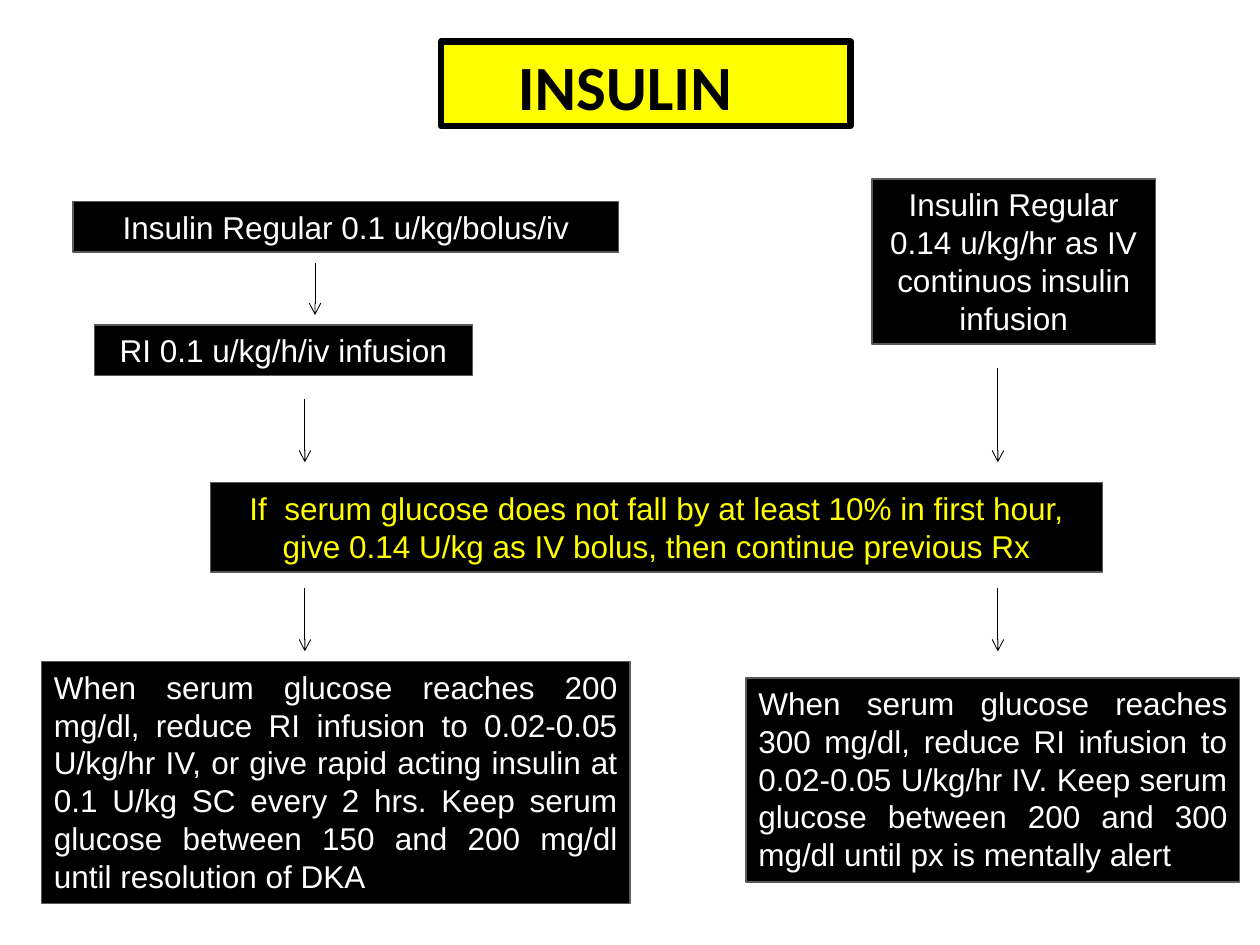
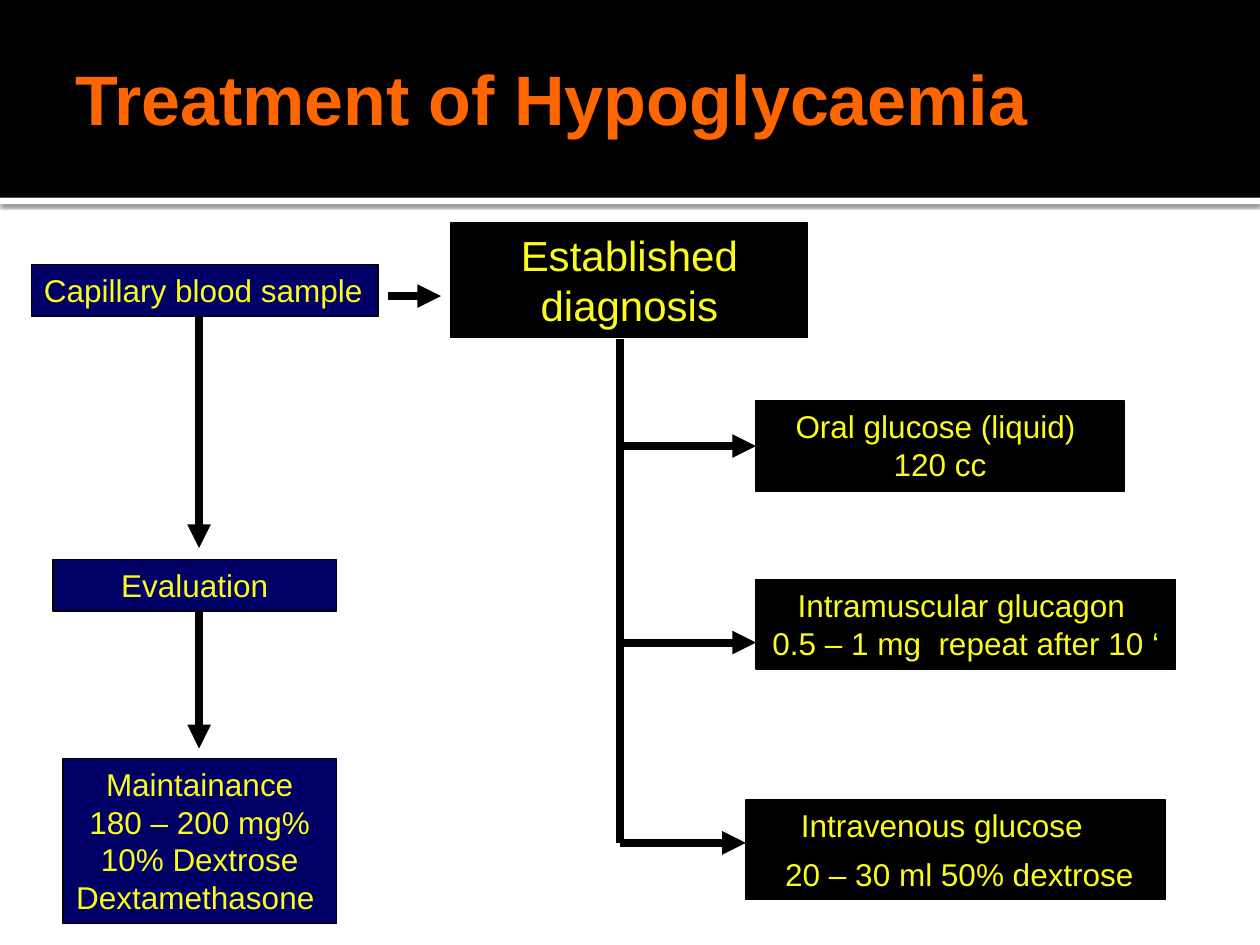
"""Build two flow charts on insulin dosing and the treatment of hypoglycaemia."""
from dataclasses import dataclass

import lxml.etree
import pptx
import pptx.dml.color
import pptx.enum.shapes
import pptx.enum.text
import pptx.oxml.ns
import pptx.util

Inches = pptx.util.Inches
Pt = pptx.util.Pt
qn = pptx.oxml.ns.qn
Align = pptx.enum.text.PP_ALIGN
Anchor = pptx.enum.text.MSO_ANCHOR


@dataclass(frozen=True)
class Theme:
    black: str = "000000"
    white: str = "FFFFFF"
    yellow: str = "FFFF00"
    lemon: str = "FBFB1D"
    navy: str = "000066"
    orange: str = "FF6600"
    edge: str = "595959"
    font: str = "Arial"
    title_font: str = "Calibri"
    body_size: float = 18
    lead_size: float = 24
    insulin_size: float = 36
    title_size: float = 40
    thin: float = 0.5
    outline: float = 0.75
    frame: float = 3.78
    thick: float = 4.5


THEME = Theme()


def rgb(value):
    return pptx.dml.color.RGBColor.from_string(value)


def write(frame, text, *, size=THEME.body_size, color=THEME.white, font=THEME.font,
          bold=False, align=Align.CENTER, anchor=Anchor.TOP, gap=0,
          insets=(0.1, 0.05, 0.1, 0.05), last_indent=0):
    frame.word_wrap = True
    frame.vertical_anchor = anchor
    (frame.margin_left, frame.margin_top,
     frame.margin_right, frame.margin_bottom) = map(Inches, insets)
    frame.text = text
    for para in frame.paragraphs:
        para.alignment = align
        para.space_before = Pt(gap)
        for span in para.runs:
            span.font.size = Pt(size)
            span.font.name = font
            span.font.bold = bold
            span.font.color.rgb = rgb(color)
    if last_indent:
        frame.paragraphs[-1]._p.get_or_add_pPr().set("marL", str(Inches(last_indent)))


class Chart:
    """Holds the theme and the current slide and draws flow chart parts on it."""

    def __init__(self, deck, theme):
        self.deck = deck
        self.theme = theme
        self.page = None

    def start_page(self):
        self.page = self.deck.slides.add_slide(self.deck.slide_layouts[6])

    def panel(self, left, top, width, height, fill, line=None, weight=THEME.outline):
        box = self.page.shapes.add_shape(
            pptx.enum.shapes.MSO_SHAPE.RECTANGLE,
            Inches(left), Inches(top), Inches(width), Inches(height))
        box.shadow.inherit = False
        box.fill.solid()
        box.fill.fore_color.rgb = rgb(fill)
        if line:
            box.line.color.rgb = rgb(line)
            box.line.width = Pt(weight)
        else:
            box.line.fill.background()
        return box

    def step(self, text, left, top, width, height, *, fill=THEME.black,
             line=THEME.black, **style):
        box = self.panel(left, top, width, height, fill, line)
        write(box.text_frame, text, **style)
        return box

    def title(self, text, left, top, width, height, *, inset=0.1, **style):
        box = self.page.shapes.add_textbox(
            Inches(left), Inches(top), Inches(width), Inches(height))
        write(box.text_frame, text, bold=True, align=Align.LEFT,
              anchor=Anchor.MIDDLE, insets=(inset, 0.05, 0.05, 0.05), **style)

    def line(self, start, end, weight, head=None, target=None, side=1):
        connector = self.page.shapes.add_connector(
            pptx.enum.shapes.MSO_CONNECTOR.STRAIGHT, *map(Inches, start + end))
        connector.line.color.rgb = rgb(self.theme.black)
        connector.line.width = Pt(weight)
        if target is not None:
            connector.end_connect(target, side)
        properties = connector._element.spPr
        if head:
            lxml.etree.SubElement(properties.find(qn("a:ln")), qn("a:tailEnd"), type=head)
        lxml.etree.SubElement(properties, qn("a:effectLst"))

    def band(self, height, strip):
        edge = self.panel(0, height, 10, strip, self.theme.white)
        effects = edge._element.spPr.find(qn("a:effectLst"))
        shadow = lxml.etree.SubElement(
            effects, qn("a:outerShdw"), blurRad=str(Pt(2.5)), dist=str(Pt(0.8)),
            dir="5400000", algn="t", rotWithShape="0")
        color = lxml.etree.SubElement(shadow, qn("a:srgbClr"), val=self.theme.black)
        lxml.etree.SubElement(color, qn("a:alpha"), val="60000")
        self.panel(0, 0, 10, height, self.theme.black)


def draw_insulin(chart):
    theme = chart.theme
    chart.start_page()
    chart.panel(3.5, 0.33, 3.25, 0.67, theme.yellow, theme.black, theme.frame)
    chart.title("INSULIN", 3.67, 0.33, 3.58, 0.7, inset=0.44,
                size=theme.insulin_size, font=theme.title_font, color=theme.black)

    for text, place, style in (
        ("Insulin Regular 0.1 u/kg/bolus/iv", (0.58, 1.6, 4.33, 0.4), {}),
        ("RI 0.1 u/kg/h/iv infusion", (0.75, 2.58, 3, 0.4), {}),
        ("If  serum glucose does not fall by at least 10% in first hour, "
         "give 0.14 U/kg as IV bolus, then continue previous Rx",
         (1.67, 3.83, 7.08, 0.71), {"color": theme.yellow}),
        ("Insulin Regular 0.14 u/kg/hr as IV continuos insulin infusion",
         (6.92, 1.42, 2.25, 1.31), {}),
        ("When serum glucose reaches 200 mg/dl, reduce RI infusion to 0.02-0.05 "
         "U/kg/hr IV, or give rapid acting insulin at 0.1 U/kg SC every 2 hrs. "
         "Keep serum glucose between 150 and 200 mg/dl until resolution of DKA",
         (0.33, 5.25, 4.67, 1.92), {"align": Align.JUSTIFY}),
        ("When serum glucose reaches 300 mg/dl, reduce RI infusion to 0.02-0.05 "
         "U/kg/hr IV. Keep serum glucose between 200 and 300 mg/dl until px is "
         "mentally alert", (5.92, 5.38, 3.92, 1.62), {"align": Align.JUSTIFY}),
    ):
        chart.step(text, *place, line=theme.edge, **style)

    for x, top, bottom in ((7.92, 2.92, 3.67), (2.5, 2.09, 2.5), (2.42, 3.17, 3.67),
                           (2.42, 4.67, 5.17), (7.92, 4.67, 5.17)):
        chart.line((x, top), (x, bottom), theme.thin, "arrow")


def draw_hypoglycaemia(chart):
    theme = chart.theme
    chart.start_page()
    chart.band(1.57, 0.05)
    chart.title("Treatment of Hypoglycaemia", 0.5, 0.38, 9, 0.78,
                size=theme.title_size, color=theme.orange)

    chart.step("Established diagnosis", 3.58, 1.77, 2.83, 0.91,
               size=theme.lead_size, color=theme.lemon)
    for text, place, align in (
        ("Capillary blood sample", (0.25, 2.1, 2.75, 0.41), Align.LEFT),
        ("Evaluation", (0.42, 4.44, 2.25, 0.41), Align.CENTER),
        ("Maintainance\v180 – 200 mg%\v10% Dextrose\vDextamethasone ",
         (0.5, 6.02, 2.17, 1.31), Align.CENTER),
    ):
        chart.step(text, *place, fill=theme.navy, color=theme.lemon, align=align)

    oral = chart.step("Oral glucose (liquid) \v120 cc", 6, 3.18, 2.92, 0.72,
                      color=theme.lemon)
    chart.step("Intramuscular glucagon \n0.5 – 1 mg  repeat after 10 ‘",
               6, 4.6, 3.33, 0.71, color=theme.lemon)
    chart.step("Intravenous glucose\n20 – 30 ml 50% dextrose", 5.92, 6.35, 3.33, 0.79,
               color=theme.lemon, gap=6, insets=(0, 0.05, 0.22, 0.05), last_indent=0.28)

    trunk, main = 4.92, 1.58
    chart.line((trunk, 2.69), (trunk, 6.69), theme.thick)
    for end, y, target in ((6, 3.54, oral), (6, 5.1, None), (5.92, 6.69, None)):
        chart.line((trunk, y), (end, y), theme.thick, "triangle", target)
    for top, bottom in ((2.52, 4.35), (4.85, 5.94)):
        chart.line((main, top), (main, bottom), theme.thick, "triangle")
    chart.line((3.08, 2.35), (3.5, 2.35), theme.thick, "triangle")


def main():
    deck = pptx.Presentation()
    deck.slide_width = Inches(10)
    deck.slide_height = Inches(7.5)
    chart = Chart(deck, THEME)
    draw_insulin(chart)
    draw_hypoglycaemia(chart)
    deck.save("out.pptx")


if __name__ == "__main__":
    main()
